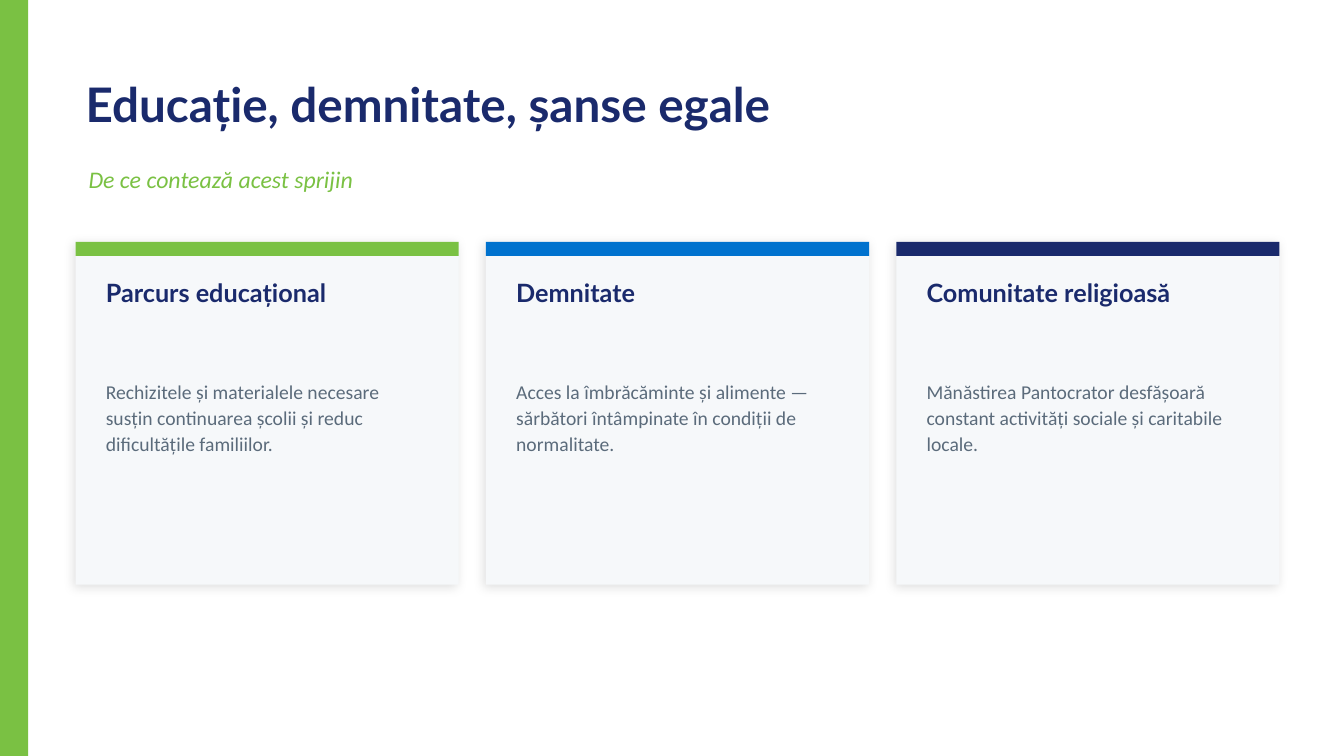
from lxml.etree import SubElement
from pptx import Presentation
from pptx.dml.color import RGBColor
from pptx.enum.shapes import MSO_SHAPE
from pptx.enum.text import MSO_ANCHOR, MSO_AUTO_SIZE, PP_ALIGN
from pptx.oxml.ns import qn
from pptx.util import Inches, Pt

WHITE = RGBColor(0xFF, 0xFF, 0xFF)
GREEN = RGBColor(0x7A, 0xC1, 0x43)
BLUE = RGBColor(0x00, 0x72, 0xCE)
NAVY = RGBColor(0x1A, 0x2A, 0x6C)
SLATE = RGBColor(0x5B, 0x6B, 0x7B)
PALE = RGBColor(0xF6, 0xF8, 0xFA)

HEADING_FONT = "Lato"
BODY_FONT = "Calibri"

CARD_LEFT, CARD_TOP = 0.75, 2.4
CARD_WIDTH, CARD_HEIGHT, CARD_GAP = 3.8, 3.4, 0.27
CARDS = [
    ("Parcurs educațional", GREEN,
     "Rechizitele și materialele necesare susțin continuarea școlii "
     "și reduc dificultățile familiilor."),
    ("Demnitate", BLUE,
     "Acces la îmbrăcăminte și alimente — sărbători întâmpinate "
     "în condiții de normalitate."),
    ("Comunitate religioasă", NAVY,
     "Mănăstirea Pantocrator desfășoară constant activități sociale "
     "și caritabile locale."),
]


def add_rectangle(page, left, top, width, height, color):
    box = page.shapes.add_shape(MSO_SHAPE.RECTANGLE, Inches(left), Inches(top),
                                Inches(width), Inches(height))
    box.shadow.inherit = False
    box.fill.solid()
    box.fill.fore_color.rgb = color
    box.line.fill.background()
    return box


def add_soft_shadow(box):
    """Put a faint black shadow below and left of the box."""
    effects = box._element.spPr.find(qn("a:effectLst"))
    shadow = SubElement(effects, qn("a:outerShdw"), blurRad=str(Pt(8)), dist=str(Pt(2)),
                        dir=str(135 * 60000), algn="bl", rotWithShape="0")
    color = SubElement(shadow, qn("a:srgbClr"), val="000000")
    SubElement(color, qn("a:alpha"), val="12000")


def write_text(box, text, *, size, font, color, bold=False, italic=False,
               anchor=MSO_ANCHOR.TOP, spacing=None, inset=None):
    frame = box.text_frame
    frame.word_wrap = True
    frame.auto_size = MSO_AUTO_SIZE.NONE
    frame.vertical_anchor = anchor
    if inset is not None:
        frame.margin_left = frame.margin_right = Inches(inset)
        frame.margin_top = frame.margin_bottom = Inches(inset)
    para = frame.paragraphs[0]
    para.alignment = PP_ALIGN.LEFT
    if spacing:
        para.line_spacing = spacing
    span = para.add_run()
    span.text = text
    span.font.name = font
    span.font.size = Pt(size)
    span.font.bold = bold
    span.font.italic = italic
    span.font.color.rgb = color


def add_text(page, left, top, width, height, text, **style):
    box = page.shapes.add_textbox(Inches(left), Inches(top), Inches(width), Inches(height))
    write_text(box, text, **style)


def add_header(page, left, top, width):
    title = page.shapes.title
    title.left, title.top = Inches(left), Inches(top)
    title.width, title.height = Inches(width), Inches(0.95)
    write_text(title, "Educație, demnitate, șanse egale", size=34, font=HEADING_FONT,
               color=NAVY, bold=True, anchor=MSO_ANCHOR.MIDDLE)
    add_text(page, left + 0.03, top + 0.95, width, 0.55, "De ce contează acest sprijin",
             size=17, font=BODY_FONT, color=GREEN, italic=True, anchor=MSO_ANCHOR.MIDDLE)


def add_card(page, left, top, width, height, heading, accent, body):
    add_soft_shadow(add_rectangle(page, left, top, width, height, PALE))
    add_rectangle(page, left, top, width, 0.14, accent)
    text_left, text_width = left + 0.3, width - 0.6
    add_text(page, text_left, top + 0.35, text_width, 0.9, heading,
             size=18, font=HEADING_FONT, color=NAVY, bold=True, inset=0)
    add_text(page, text_left, top + 1.35, text_width, height - 1.5, body,
             size=14, font=BODY_FONT, color=SLATE, spacing=1.1, inset=0)


def main():
    deck = Presentation()
    deck.slide_width, deck.slide_height = Inches(13.33), Inches(7.5)
    page = deck.slides.add_slide(deck.slide_layouts[5])
    page.background.fill.solid()
    page.background.fill.fore_color.rgb = WHITE
    add_rectangle(page, 0, 0, 0.28, 7.5, GREEN)
    add_header(page, 0.75, 0.55, 11.9)
    for index, (heading, accent, body) in enumerate(CARDS):
        left = CARD_LEFT + index * (CARD_WIDTH + CARD_GAP)
        add_card(page, left, CARD_TOP, CARD_WIDTH, CARD_HEIGHT, heading, accent, body)
    deck.save("out.pptx")


if __name__ == "__main__":
    main()
